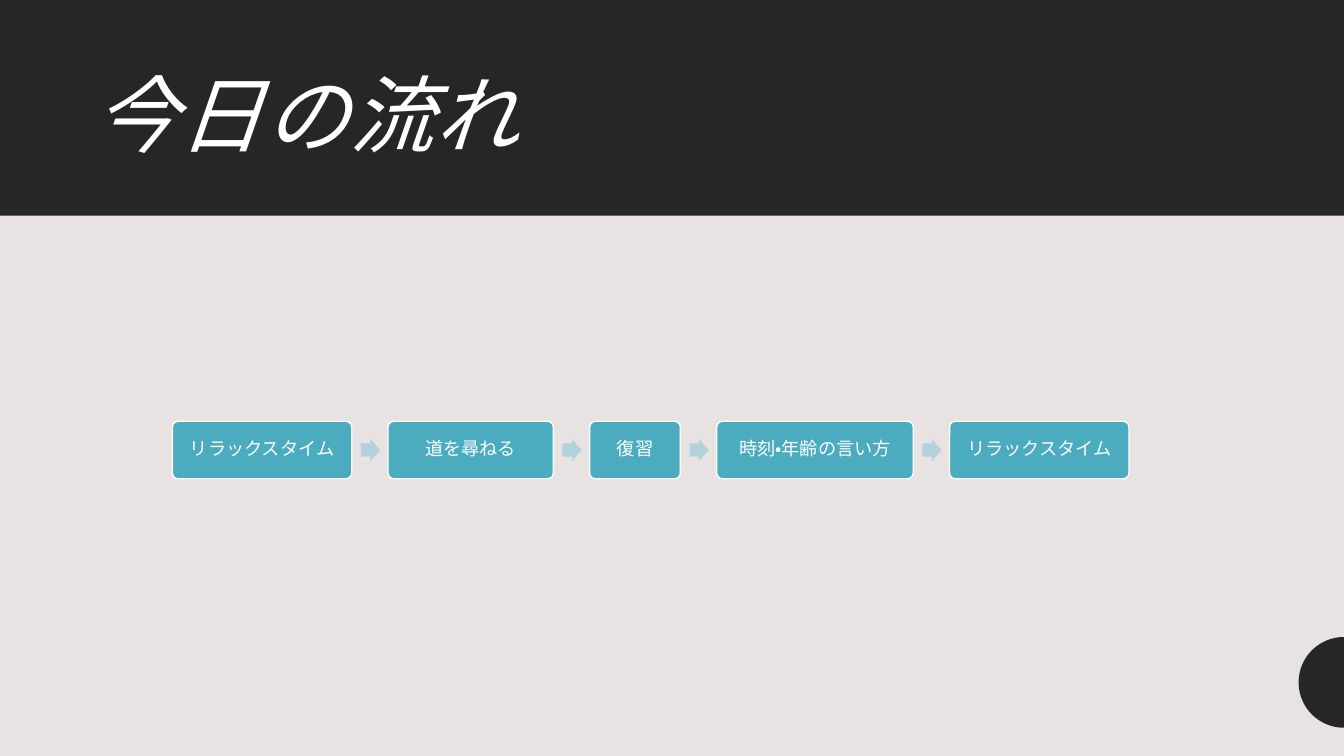
from math import cos, pi, sin

from pptx import Presentation
from pptx.dml.color import RGBColor
from pptx.enum.lang import MSO_LANGUAGE_ID
from pptx.enum.shapes import MSO_SHAPE
from pptx.enum.text import MSO_ANCHOR, PP_ALIGN
from pptx.util import Inches, Pt

WIDE, HIGH = 13.333, 7.5
DARK, PALE, TEAL, MIST, WHITE = "262626", "E8E2E3", "4BACC0", "B2D2DC", "FFFFFF"

# Label, box width, font
STEPS = [
    ("リラックスタイム", 1.78, "Calibri"),
    ("道を尋ねる", 1.64, "Calibri"),
    ("復習", 0.9, "Calibri"),
    ("時刻・年齢の言い方", 1.95, "Arial"),
    ("リラックスタイム", 1.78, "Calibri"),
]


def color(code):
    return RGBColor.from_string(code)


def paint(shape, fill, line=None):
    shape.shadow.inherit = False
    shape.fill.solid()
    shape.fill.fore_color.rgb = color(fill)
    if line:
        shape.line.color.rgb = color(line)
        shape.line.width = Pt(1)
    else:
        shape.line.fill.background()


def draw(slide, kind, box, fill, line=None, adjust=()):
    shape = slide.shapes.add_shape(kind, *map(Inches, box))
    paint(shape, fill, line)
    for i, value in enumerate(adjust):
        shape.adjustments[i] = value
    return shape


def write(shape, text, size, font, align=PP_ALIGN.LEFT, italic=False,
          inset=(0.1, 0.05), track=0):
    frame = shape.text_frame
    frame.word_wrap = True
    frame.vertical_anchor = MSO_ANCHOR.MIDDLE
    frame.margin_left = frame.margin_right = Inches(inset[0])
    frame.margin_top = frame.margin_bottom = Inches(inset[1])
    para = frame.paragraphs[0]
    para.alignment = align
    para.line_spacing = 0.9
    run = para.add_run()
    run.text = text
    run.font.size = Pt(size)
    run.font.name = font
    run.font.italic = italic
    run.font.color.rgb = color(WHITE)
    run.font.language_id = MSO_LANGUAGE_ID.JAPANESE
    if track:
        run.font._element.set("spc", str(track * 100))


# Dark band with the title
def header(slide, box):
    left, top, width, height = box
    draw(slide, MSO_SHAPE.RECTANGLE, box, DARK)
    title = slide.shapes.add_textbox(
        Inches(left + 0.83), Inches(top + 0.46), Inches(width - 1.66), Inches(1.45))
    write(title, "今日の流れ", 60, "Arial", italic=True, track=1)


# Half disc against the right edge
def disc(slide, box):
    left, top, width, height = box
    turns = [pi * i / 48 for i in range(49)]
    points = [(Inches(left + width - width * sin(a)),
               Inches(top + height / 2 * (1 - cos(a)))) for a in turns]
    build = slide.shapes.build_freeform(*points[0])
    build.add_line_segments(points[1:], close=True)
    paint(build.convert_to_shape(), DARK)


# Row of steps with an arrow in each gap
def flow(slide, box, gap=0.36):
    left, top, width, height = box
    for i, (label, wide, font) in enumerate(STEPS):
        if i:
            draw(slide, MSO_SHAPE.RIGHT_ARROW,
                 (left - gap + 0.09, top + (height - 0.22) / 2, 0.19, 0.22),
                 MIST, adjust=(0.6, 0.5))
        step = draw(slide, MSO_SHAPE.ROUNDED_RECTANGLE,
                    (left, top, wide, height), TEAL, WHITE, (0.1,))
        write(step, label, 13, font, PP_ALIGN.CENTER, inset=(0.05, 0.05))
        left += wide + gap


def main():
    deck = Presentation()
    deck.slide_width, deck.slide_height = Inches(WIDE), Inches(HIGH)
    slide = deck.slides.add_slide(deck.slide_layouts[6])
    slide.background.fill.solid()
    slide.background.fill.fore_color.rgb = color(PALE)
    header(slide, (0, 0, WIDE, 2.14))
    disc(slide, (WIDE - 0.45, 6.32, 0.45, 0.9))
    flow(slide, (1.71, 4.18, 9.5, 0.57))
    deck.save("out.pptx")


if __name__ == "__main__":
    main()
